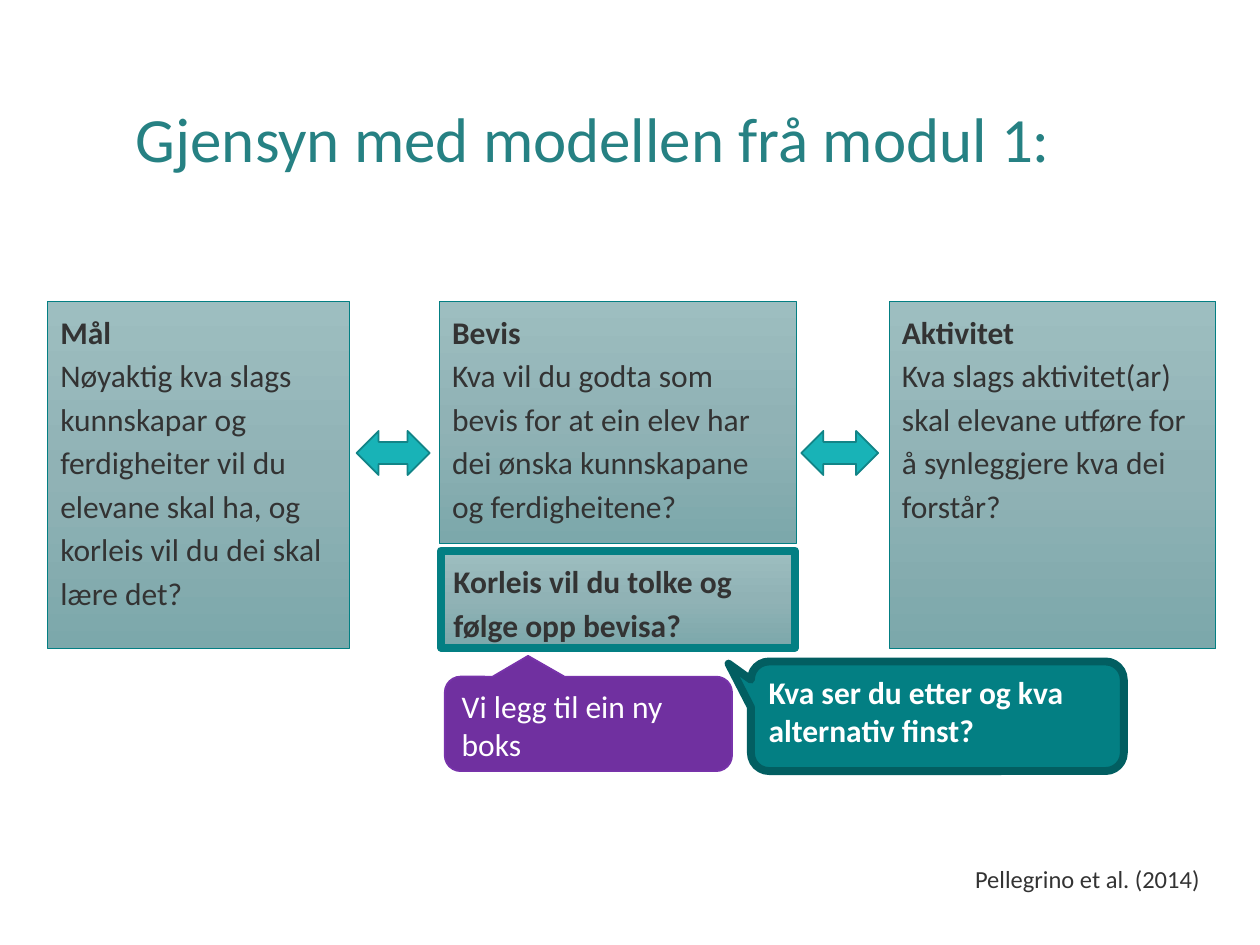
from copy import deepcopy

from pptx import Presentation
from pptx import util as u
from pptx.dml import color
from pptx.enum import shapes, text
from pptx.oxml import ns

COLORS = {
    "title": "268183",
    "body": "333333",
    "white": "FFFFFF",
    "teal": "037F83",
    "dark_teal": "025E61",
    "arrow": "18B3B7",
    "arrow_line": "128487",
    "purple": "7030A0",
    "purple_line": "7833AB",
}
GRADIENT = [(0, "9DBEC0"), (0.5, "90B2B5"), (1, "7CA8AB")]
FONT = "Calibri"


def rgb(name):
    return color.RGBColor.from_string(COLORS[name])


def add_span(para, words, size, ink, bold=False):
    span = para.add_run()
    span.text = words
    span.font.name = FONT
    span.font.size = u.Pt(size)
    span.font.bold = bold
    span.font.color.rgb = rgb(ink)


def add_outlined_shape(page, kind, box, line, width):
    shape = page.shapes.add_shape(kind, *map(u.Inches, box))
    shape.shadow.inherit = False
    shape.line.color.rgb = rgb(line)
    shape.line.width = u.Pt(width)
    frame = shape.text_frame
    frame.word_wrap = True
    frame.vertical_anchor = text.MSO_ANCHOR.TOP
    frame.paragraphs[0].alignment = text.PP_ALIGN.LEFT
    return shape


def fill_gradient(shape):
    shape.fill.gradient()
    shape.fill.gradient_angle = 270
    stop_list = shape.element.spPr.find(".//" + ns.qn("a:gsLst"))
    stop_list.insert(1, deepcopy(stop_list[0]))
    for stop, (position, ink) in zip(shape.fill.gradient_stops, GRADIENT):
        stop.position = position
        stop.color.rgb = color.RGBColor.from_string(ink)


def add_text(page, box, words, size, ink, anchor=text.MSO_ANCHOR.TOP, spacing=1.0):
    frame = page.shapes.add_textbox(*map(u.Inches, box)).text_frame
    frame.word_wrap = True
    frame.vertical_anchor = anchor
    para = frame.paragraphs[0]
    para.line_spacing = spacing
    add_span(para, words, size, ink)


def add_panel(page, box, heading, question=None, width=0.5):
    panel = add_outlined_shape(page, shapes.MSO_SHAPE.RECTANGLE, box, "teal", width)
    fill_gradient(panel)
    frame = panel.text_frame
    paras = [frame.paragraphs[0]]
    add_span(paras[0], heading, 18, "body", bold=True)
    if question:
        paras.append(frame.add_paragraph())
        add_span(paras[1], question, 18, "body")
    for para in paras:
        para.alignment = text.PP_ALIGN.LEFT
        para.line_spacing = 1.15


def add_double_arrow(page, box):
    arrow = add_outlined_shape(
        page, shapes.MSO_SHAPE.LEFT_RIGHT_ARROW, box, "arrow_line", 1)
    arrow.fill.solid()
    arrow.fill.fore_color.rgb = rgb("arrow")


def add_callout(page, box, tip, words, fill, line, width, bold=False):
    callout = add_outlined_shape(
        page, shapes.MSO_SHAPE.ROUNDED_RECTANGULAR_CALLOUT, box, line, width)
    callout.adjustments[0], callout.adjustments[1] = tip
    callout.fill.solid()
    callout.fill.fore_color.rgb = rgb(fill)
    para = callout.text_frame.paragraphs[0]
    para.space_after = u.Pt(10)
    add_span(para, words, 18, "white", bold)


def main():
    deck = Presentation()
    deck.slide_width, deck.slide_height = u.Inches(10), u.Inches(7.5)
    page = deck.slides.add_slide(deck.slide_layouts[6])
    top, height = 2.39, 2.76

    add_text(page, (0.98, 0.4, 8.29, 1.45), "Gjensyn med modellen frå modul 1:",
             36, "title", text.MSO_ANCHOR.MIDDLE, 0.9)
    add_panel(page, (0.38, top, 2.39, height), "Mål",
              "Nøyaktig kva slags kunnskapar og ferdigheiter vil du elevane "
              "skal ha, og korleis vil du dei skal lære det?")
    for left, width in ((2.83, 0.58), (6.36, 0.61)):
        add_double_arrow(page, (left, 3.42, width, 0.35))
    add_panel(page, (7.06, top, 2.59, height), "Aktivitet",
              "Kva slags aktivitet(ar) skal elevane utføre for å synleggjere "
              "kva dei forstår?")
    add_panel(page, (3.49, top, 2.83, 1.92), "Bevis",
              "Kva vil du godta som bevis for at ein elev har dei ønska "
              "kunnskapane og ferdigheitene?")
    add_panel(page, (3.5, 4.37, 2.81, 0.77),
              "Korleis vil du tolke og følge opp bevisa?", width=4.5)
    add_callout(page, (3.53, 5.37, 2.28, 0.75), (-0.21, -0.72),
                "Vi legg til ein ny boks", "purple", "purple_line", 1)
    add_callout(page, (5.96, 5.25, 2.96, 0.87), (-0.56, -0.48),
                "Kva ser du etter og kva alternativ finst?",
                "teal", "dark_teal", 4.5, bold=True)
    add_text(page, (7.64, 6.81, 2.02, 0.34), "Pellegrino et al. (2014)", 14, "body")
    deck.save("out.pptx")


if __name__ == "__main__":
    main()
